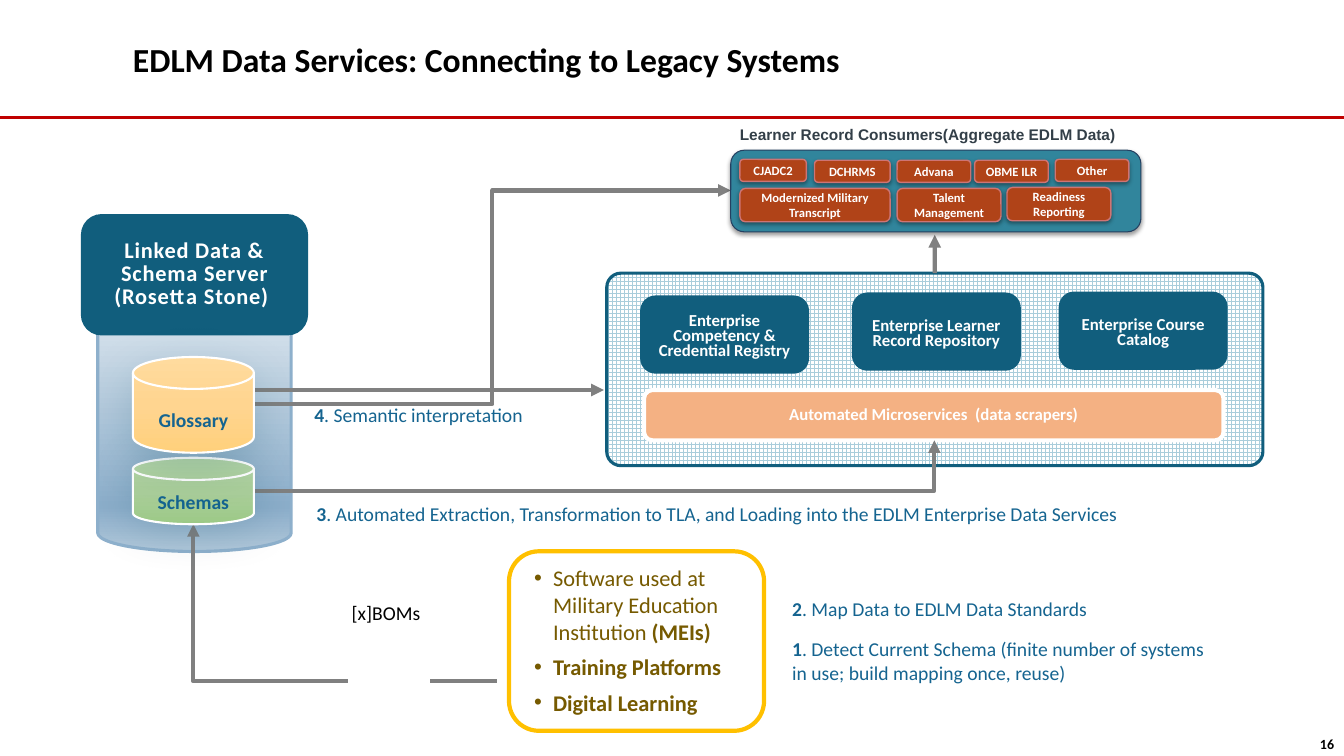
from dataclasses import dataclass

from lxml.etree import SubElement
from pptx import Presentation
from pptx.dml.color import RGBColor
from pptx.enum.dml import MSO_PATTERN
from pptx.enum.shapes import MSO_CONNECTOR as Link, MSO_SHAPE as Form
from pptx.enum.text import MSO_ANCHOR as Anchor, MSO_AUTO_SIZE as AutoSize, PP_ALIGN as Align
from pptx.oxml.ns import qn
from pptx.util import Pt

# Content: text runs are (text, bold), boxes are (left, top, width, height)
TITLE = "EDLM Data Services: Connecting to Legacy Systems"
CONSUMERS_LABEL = "Learner Record Consumers(Aggregate EDLM Data)"
SERVER = ["Linked Data & Schema Server", "(Rosetta Stone) "]
MICROSERVICES = "Automated Microservices  (data scrapers)"
BOMS = "[x]BOMs"
PAGE = "16"
SOFTWARE = [
    [("Software used at Military Education Institution ", False), ("(MEIs)", True)],
    [("Training Platforms", True)],
    [("Digital Learning", True)],
]
MAPPING_STEPS = [
    [("2", True), (". Map Data to EDLM Data Standards", False)],
    [("1", True), (". Detect Current Schema (finite number of systems in use; "
                   "build mapping once, reuse)", False)],
]
LOADING_STEP = [[("3", True), (". Automated Extraction, Transformation to TLA, and Loading "
                               "into the EDLM Enterprise Data Services", False)]]
SEMANTIC_STEP = [[("4", True), (". Semantic interpretation", False)]]
SERVICES = [
    ("Enterprise Competency & Credential Registry", 460, 213.8),
    ("Enterprise Learner Record Repository", 611.3, 211.7),
    ("Enterprise Course Catalog", 759, 211),
]
STORES = [  # name, top, height, gradient, shadow blur and distance, anchor, top inset
    ("Schemas", 327, 47.5, [(0, "B5D5A7"), (50, "AACE9A"), (100, "9CC987")],
     (34, 3), Anchor.MIDDLE, 10.8),
    ("Glossary", 255, 68.4, [(0, "FFDB9E"), (50, "FFD590"), (100, "FFD07C")],
     (34, 9), Anchor.BOTTOM, 25.2),
]
CONSUMERS = [
    ("CJADC2", (528.5, 113.8, 47.5, 15.8)),
    ("DCHRMS", (581.8, 114.5, 54, 15.8)),
    ("Advana", (640.8, 114.5, 52.6, 15.8)),
    ("OBME ILR", (696.2, 114.5, 52.6, 15.8)),
    ("Other", (753.8, 113.8, 52.6, 15.8)),
    ("Modernized Military Transcript", (528.5, 134.6, 107.3, 23.8)),
    ("Talent Management", (640.8, 134.6, 74.2, 23.8)),
    ("Readiness Reporting", (719.3, 133.9, 74.2, 23.8)),
]


@dataclass(frozen=True)
class Theme:
    font: str = "Calibri"
    label_font: str = "Arial"
    black: str = "000000"
    white: str = "FFFFFF"
    rule: str = "C00000"
    teal: str = "115E7D"
    blue: str = "156490"
    grey: str = "808080"
    gold: str = "FFC000"
    brown: str = "765A00"
    slate: str = "333F48"
    orange: str = "F4B183"
    grid: str = "A9CDDB"
    consumers: str = "31859C"
    consumers_edge: str = "254061"
    chip: str = "B04318"
    chip_edge: str = "CE7474"
    store_shadow: str = "004760"
    can_edge: str = "8EB0CC"
    can_stops: tuple = ((23, "CFDDE9"), (84, "8CAECA"), (100, "B0C7DA"))
    title: int = 24
    large: int = 16
    body: int = 14
    medium: int = 12
    label: int = 11
    page: int = 10
    small: int = 9


T = Theme()
rgb = RGBColor.from_string


def write(shape, paragraphs, size, color, align=Align.LEFT, anchor=Anchor.TOP, bold=False,
          font=T.font, leading=None, gap=0, after=0, insets=(7.2, 3.6, 7.2, 3.6), wrap=True):
    """Fill a shape with paragraphs, each a string or a list of (text, bold) runs."""
    frame = shape.text_frame
    frame.auto_size, frame.word_wrap, frame.vertical_anchor = AutoSize.NONE, wrap, anchor
    (frame.margin_left, frame.margin_top,
     frame.margin_right, frame.margin_bottom) = map(Pt, insets)
    for index, content in enumerate(paragraphs):
        paragraph = frame.paragraphs[0] if index == 0 else frame.add_paragraph()
        paragraph.alignment, paragraph.line_spacing = align, leading
        paragraph.space_before, paragraph.space_after = Pt(gap if index else 0), Pt(after)
        for words, strong in [(content, bold)] if isinstance(content, str) else content:
            run = paragraph.add_run()
            run.text = words
            run.font.name, run.font.size, run.font.bold = font, Pt(size), strong
            run.font.color.rgb = rgb(color)
    return shape


def box(form, place, fill=None, edge=None, width=1.0, round_by=None):
    shape = shapes.add_shape(form, *map(Pt, place))
    shape.shadow.inherit = False
    if fill:
        shape.fill.solid()
        shape.fill.fore_color.rgb = rgb(fill)
    else:
        shape.fill.background()
    if edge:
        shape.line.color.rgb, shape.line.width = rgb(edge), Pt(width)
    else:
        shape.line.fill.background()
    if round_by is not None:
        shape.adjustments[0] = round_by
    return shape


def label(place, paragraphs, size, color, **style):
    return write(shapes.add_textbox(*map(Pt, place)), paragraphs, size, color, **style)


def color_xml(parent, color, alpha=100):
    node = SubElement(parent, qn("a:srgbClr"), val=color)
    if alpha < 100:
        SubElement(node, qn("a:alpha"), val=str(alpha * 1000))


def shade(shape, stops):
    """Vertical gradient with any number of stops."""
    shape.fill.gradient()
    shape.fill.gradient_angle = 270
    stop_list = shape.element.spPr.find(qn("a:gradFill")).find(qn("a:gsLst"))
    stop_list.clear()
    for position, color in stops:
        color_xml(SubElement(stop_list, qn("a:gs"), pos=str(position * 1000)), color)


def drop_shadow(shape, color, alpha, blur, distance):
    effects = shape.element.spPr.find(qn("a:effectLst"))
    shadow = SubElement(effects, qn("a:outerShdw"), blurRad=str(Pt(blur)), dist=str(Pt(distance)),
                        dir="5400000", algn="t", rotWithShape="0")
    color_xml(shadow, color, alpha)


def link(kind, start, end, color=T.grey, width=3, arrow=True, one_bend=False):
    line = shapes.add_connector(kind, *map(Pt, start + end))
    line.line.color.rgb, line.line.width = rgb(color), Pt(width)
    properties = line.element.spPr
    if one_bend:
        properties.find(qn("a:prstGeom")).set("prst", "bentConnector2")
    if arrow:
        SubElement(properties.find(qn("a:ln")), qn("a:tailEnd"), type="triangle")
    SubElement(properties, qn("a:effectLst"))
    return line


def move(holder, place):
    holder.left, holder.top, holder.width, holder.height = map(Pt, place)
    return holder


deck = Presentation()
deck.slide_width, deck.slide_height = Pt(960), Pt(540)
slide = deck.slides.add_slide(deck.slide_layouts[1])
shapes = slide.shapes

# Heading, rule and page number
write(move(shapes.title, (87.8, 5.8, 853.2, 72.7)), [TITLE], T.title, T.black,
      anchor=Anchor.MIDDLE, bold=True)
link(Link.STRAIGHT, (0, 84.2), (960, 84.2), T.rule, 2, arrow=False)
label((736.6, 522, 223.4, 18), [PAGE], T.page, T.black, align=Align.RIGHT, bold=True)
label((510.5, 84.2, 304.6, 25.2), [CONSUMERS_LABEL], T.label, T.slate, align=Align.CENTER,
      anchor=Anchor.MIDDLE, bold=True, font=T.label_font, leading=0.85, insets=(0, 0, 0, 0))

# Schema server
shade(box(Form.CAN, (69.8, 193.7, 138.2, 200.2), T.white, T.can_edge, 2.25, 0.192), T.can_stops)
server = write(box(Form.ROUNDED_RECTANGLE, (58.3, 153.4, 161.3, 85.7), T.teal, T.teal), SERVER,
               T.large, T.white, align=Align.CENTER, anchor=Anchor.MIDDLE, bold=True, leading=0.85)
for line in server.text_frame.paragraphs:
    line.runs[0].font._element.set("spc", "60")

# Legacy software, its link to the schemas and the gaps in that link
link(Link.ELBOW, (363.6, 486.7), (138.2, 374.4), one_bend=True)
box(Form.RECTANGLE, (355, 427, 37.4, 92.2), T.white)
box(Form.ROUNDED_RECTANGLE, (363.6, 393.8, 182.2, 128.2), edge=T.gold, width=3)
box(Form.RECTANGLE, (249.1, 473.8, 57.6, 22.3), T.white, T.white)
label((244.1, 425.5, 70.6, 24.5), [BOMS], T.body, T.black)
software = write(move(slide.placeholders[1], (374.4, 399.6, 172.1, 116.6)), SOFTWARE,
                 T.large, T.brown, gap=6)
for item in software.text_frame.paragraphs:
    item._p.get_or_add_pPr().set("marL", str(Pt(13.5)))
    item._p.get_or_add_pPr().set("indent", str(Pt(-13.5)))
shapes.element.append(software.element)

# Numbered steps
label((558.7, 422.6, 316.1, 70.6), MAPPING_STEPS, T.body, T.blue, after=12)
label((218.9, 355, 596.2, 24.5), LOADING_STEP, T.body, T.blue, wrap=False)
label((217.4, 284.4, 164.9, 24.5), SEMANTIC_STEP, T.body, T.blue, wrap=False)

# Enterprise data services
link(Link.ELBOW, (181.4, 288.7), (522, 136.1))
link(Link.STRAIGHT, (181.4, 278.6), (431.3, 278.6))
panel = box(Form.ROUNDED_RECTANGLE, (433.4, 195.1, 468.7, 137.5), T.white, T.teal, 2.25, 0.074)
panel.fill.patterned()
panel.fill.pattern = MSO_PATTERN.LARGE_GRID
panel.fill.fore_color.rgb, panel.fill.back_color.rgb = rgb(T.grid), rgb(T.white)
link(Link.STRAIGHT, (667.7, 195.1), (667.7, 167.8)).begin_connect(panel, 0)
write(box(Form.ROUNDED_RECTANGLE, (460, 278.6, 414, 36), T.orange, T.white, 3), [MICROSERVICES],
      T.medium, T.white, align=Align.CENTER, anchor=Anchor.MIDDLE, bold=True, leading=0.85)
for name, left, top in SERVICES:
    write(box(Form.ROUNDED_RECTANGLE, (left, top, 115.2, 50.4), T.teal, T.teal, 5.5), [name],
          T.medium, T.white, align=Align.CENTER, anchor=Anchor.MIDDLE, bold=True, leading=0.75,
          insets=(7.2, 7.2, 7.2, 3.6))
link(Link.ELBOW, (181.4, 350.6), (667.4, 314.6), one_bend=True)

# Stores inside the server
for name, top, height, stops, (blur, distance), anchor, inset in STORES:
    store = box(Form.FLOWCHART_MAGNETIC_DISK, (95, top, 86.4, height), T.white, T.white, 1.5)
    shade(store, stops)
    drop_shadow(store, T.store_shadow, 19, blur, distance)
    write(store, [name], T.body, T.blue, align=Align.CENTER, anchor=anchor, bold=True,
          insets=(7.2, inset, 7.2, 3.6))

# Learner record consumers
group = box(Form.ROUNDED_RECTANGLE, (522, 107.3, 293, 58.3), T.consumers, T.consumers_edge, 0.75)
drop_shadow(group, T.black, 38, 3.1, 1.6)
for name, place in CONSUMERS:
    chip = box(Form.ROUNDED_RECTANGLE, place, T.chip, T.chip_edge)
    drop_shadow(chip, T.black, 38, 3.1, 1.6)
    write(chip, [name], T.small, T.white, align=Align.CENTER, anchor=Anchor.MIDDLE, bold=True)

deck.save("out.pptx")
